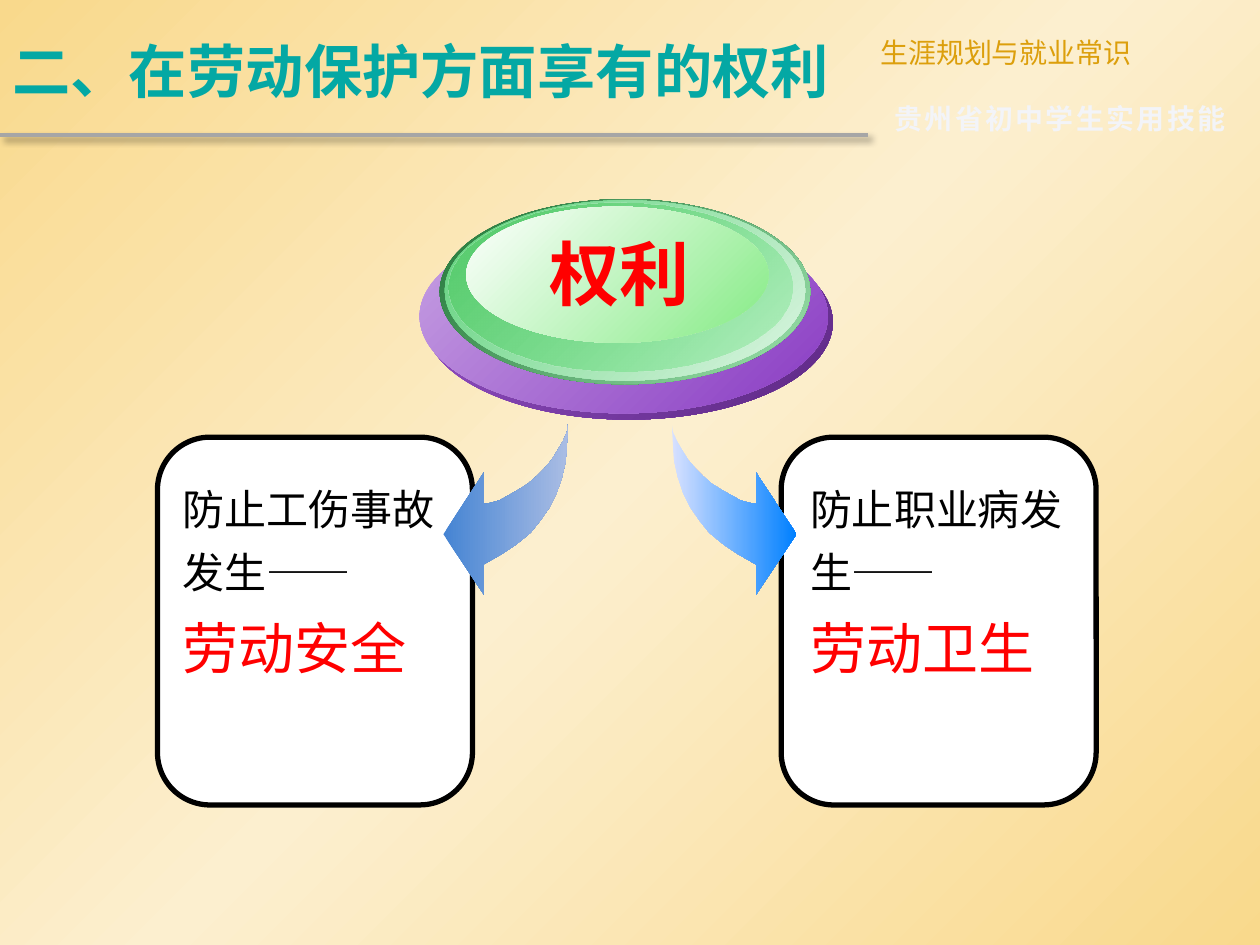
"""Build the slide on the two labour protection rights."""
from pptx import Presentation
from pptx.dml.color import RGBColor
from pptx.enum.shapes import MSO_CONNECTOR, MSO_SHAPE
from pptx.enum.text import MSO_ANCHOR, PP_ALIGN
from pptx.oxml import parse_xml
from pptx.oxml.ns import nsdecls, qn
from pptx.util import Pt

OVAL, ROUND = MSO_SHAPE.OVAL, MSO_SHAPE.ROUNDED_RECTANGLE
STRAIGHT = MSO_CONNECTOR.STRAIGHT
TOP, MIDDLE = MSO_ANCHOR.TOP, MSO_ANCHOR.MIDDLE
LEFT, CENTER, JUSTIFY = PP_ALIGN.LEFT, PP_ALIGN.CENTER, PP_ALIGN.JUSTIFY
FONT = "Noto Sans CJK SC"
HUES = {
    "edge": "F9D98C", "glow": "FCEFCF", "rule": "A6A6A6", "teal": "04A8A4",
    "gold": "DC9F0C", "pale": "F3F4F8", "black": "000000", "white": "FFFFFF",
    "red": "FF0000",
}


def shade(fill, root, stops, angle):
    fill.gradient()
    fill.gradient_angle = -angle % 360
    ramp = root.find(".//" + qn("a:gsLst"))
    for old in list(ramp):
        ramp.remove(old)
    for spot, hue, alpha in stops:
        ramp.append(parse_xml(
            f'<a:gs {nsdecls("a")} pos="{spot * 1000}"><a:srgbClr val="{hue}">'
            f'<a:alpha val="{alpha * 1000}"/></a:srgbClr></a:gs>'))


def write(area, lines, align=LEFT, anchor=MIDDLE, wrap=True, gap=1.0, track=0):
    box = slide.shapes.add_textbox(*map(Pt, area))
    frame = box.text_frame
    frame.word_wrap, frame.vertical_anchor = wrap, anchor
    for i, (text, size, hue, bold) in enumerate(lines):
        para = frame.add_paragraph() if i else frame.paragraphs[0]
        para.alignment, para.line_spacing = align, gap
        run = para.add_run()
        run.text = text
        form = {"name": FONT, "size": Pt(size), "bold": bold}
        for key, value in form.items():
            setattr(run.font, key, value)
        run.font.color.rgb = RGBColor.from_string(HUES[hue])
        props = run.font._element
        props.append(parse_xml(f'<a:ea {nsdecls("a")} typeface="{FONT}"/>'))
        if track:
            props.set("spc", str(track))
    return box


deck = Presentation()
deck.slide_width, deck.slide_height = Pt(720), Pt(540)
slide = deck.slides.add_slide(deck.slide_layouts[6])
shade(slide.background.fill, slide.element,
      [(0, HUES["edge"], 100), (50, HUES["glow"], 100), (100, HUES["edge"], 100)], 45)

rule = slide.shapes.add_connector(STRAIGHT, 0, Pt(77), Pt(496), Pt(77))
rule.line.color.rgb = RGBColor.from_string(HUES["rule"])
rule.line.width = Pt(2.25)
rule._element.spPr.append(parse_xml(
    f'<a:effectLst {nsdecls("a")}><a:outerShdw blurRad="{Pt(4)}" dist="{Pt(3)}" '
    f'dir="2700000" algn="tl" rotWithShape="0"><a:srgbClr val="{HUES["black"]}">'
    '<a:alpha val="40000"/></a:srgbClr></a:outerShdw></a:effectLst>'))

write((0, 3.6, 496, 73.4), [("二、在劳动保护方面享有的权利", 33.3, "teal", True)])
write((496, 16.6, 224, 26.6), [("生涯规划与就业常识", 16, "gold", False)], JUSTIFY)
write((504, 54, 212, 27), [("贵州省初中学生实用技能", 16, "pale", True)],
      wrap=False, track=140)

cards = [
    (90, 97.2, "防止工伤事故发生——", "劳动安全"),
    (446.4, 455.8, "防止职业病发生——", "劳动卫生"),
]
for left, inner, cause, name in cards:
    card = slide.shapes.add_shape(ROUND, Pt(left), Pt(249.8), Pt(180), Pt(210.2))
    card.adjustments[0] = 0.167
    card.shadow.inherit = False
    card.fill.solid()
    card.fill.fore_color.rgb = RGBColor.from_string(HUES["white"])
    card.line.color.rgb = RGBColor.from_string(HUES["black"])
    card.line.width = Pt(3)
    note = write((inner, 265.7, 160.6, 152.6),
                 [(cause, 24, "black", False), (name, 32, "red", False)],
                 anchor=TOP, gap=1.25)
    note.fill.solid()
    note.fill.fore_color.rgb = RGBColor.from_string(HUES["white"])

curve = [
    (0, 0), (0.7, 11.5), (1.4, 21.6), (3.6, 31), (6.5, 39.6), (10.8, 48.2),
    (15.8, 55.4), (21.6, 62.6), (29.5, 69.1), (38.2, 74.9), (48.2, 80.6),
    (48.2, 97.9), (71.3, 63.4), (48.2, 28.1), (48.2, 46.1), (43.9, 45.4),
    (38.9, 43.9), (33.8, 41), (28.8, 38.2), (23, 34.6), (18, 30.2),
    (13.7, 25.9), (9.4, 20.9), (5.8, 15.1), (2.9, 10.1), (0.7, 5),
]
arrows = [(324.7, -1, "4584D3", "AABDE4"), (383.8, 1, "D8E1FF", "0080FF")]
for start, side, first, last in arrows:
    spots = [(Pt(start + side * x), Pt(241.9 + y)) for x, y in curve]
    path = slide.shapes.build_freeform(*spots[0])
    path.add_line_segments(spots[1:], close=True)
    arrow = path.convert_to_shape()
    arrow.shadow.inherit = False
    arrow.line.fill.background()
    shade(arrow.fill, arrow._element, [(0, first, 100), (100, last, 100)], 0)

discs = [
    (242.6, 128.9, 233.3, 110.9, "9954CC", "5D2884", 100),
    (239.8, 125.3, 233.3, 110.9, "C7A1E3", "893BC3", 100),
    (251.3, 113.8, 211.7, 105.8, "217436", "9DE3AE", 100),
    (254.2, 114.5, 205.9, 103, "5BD078", "DEF6E4", 100),
    (256.3, 115.9, 196.6, 96.5, "53C969", "91EBA2", 48),
    (266.4, 118.1, 172.8, 77.8, "FFFFFF", "85EB85", 100),
]
for *area, first, last, alpha in discs:
    disc = slide.shapes.add_shape(OVAL, *map(Pt, area))
    disc.shadow.inherit = False
    disc.line.fill.background()
    shade(disc.fill, disc._element, [(0, first, 100), (100, last, alpha)], 45)
write((306.7, 128.2, 95, 55.4), [("权利", 40, "red", True)], CENTER, wrap=False)

deck.save("out.pptx")
